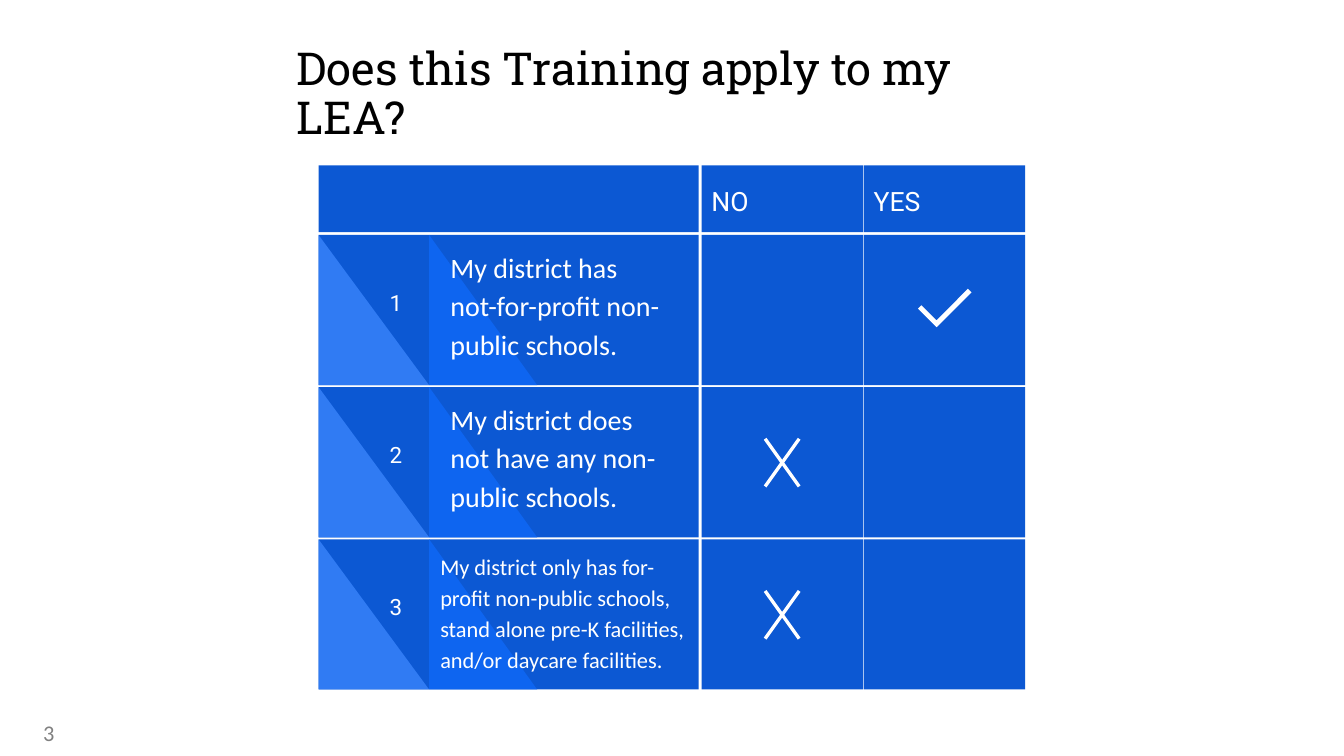
import pptx
import pptx.util
import pptx.dml.color
import pptx.enum.shapes
import pptx.enum.text

Pt = pptx.util.Pt
RGB = pptx.dml.color.RGBColor
KIND = pptx.enum.shapes.MSO_SHAPE
ANCHOR = pptx.enum.text.MSO_ANCHOR
ALIGN = pptx.enum.text.PP_ALIGN

TITLE = "Does this Training apply to my LEA?"
PAGE = "3"
HEADS = ["NO", "YES"]
# statement, answer, text left, text width, text size, space after
ROWS = [
    ("My district has not-for-profit non-public schools.",
     "YES", 314.6, 170, 20, 12),
    ("My district does not have any non-public schools.",
     "NO", 314.6, 170, 20, 12),
    ("My district only has for-profit non-public schools, "
     "stand alone pre-K facilities, and/or daycare facilities.",
     "NO", 307.4, 192, 16, 0),
]

BLUE = RGB(0x0C, 0x58, 0xD3)
MID = RGB(0x0E, 0x65, 0xF0)
LIGHT = RGB(0x30, 0x7B, 0xF3)
WHITE = RGB(0xFF, 0xFF, 0xFF)
BLACK = RGB(0, 0, 0)
GREY = RGB(0x80, 0x80, 0x80)

LEFT, WIDE = 227.5, 271.6
COLS, CELL = [501.1, 617], 115.3
HEAD_TOP, HEAD_HIGH = 118.1, 47.8
TOP, STEP, HIGH = 167.8, 108.7, 107.3

deck = pptx.Presentation()
deck.slide_width, deck.slide_height = Pt(960), Pt(540)
slide = deck.slides.add_slide(deck.slide_layouts[6])


def draw(kind, x, y, w, h, fill):
    shape = slide.shapes.add_shape(kind, Pt(x), Pt(y), Pt(w), Pt(h))
    shape.shadow.inherit = False
    shape.fill.solid()
    shape.fill.fore_color.rgb = fill
    shape.line.fill.background()
    return shape


def write(shape, text, face, size, color=WHITE, anchor=ANCHOR.TOP,
          align=ALIGN.LEFT, pad=7.2, lines=1.0, after=0):
    frame = shape.text_frame
    frame.word_wrap = True
    frame.vertical_anchor = anchor
    frame.margin_left = frame.margin_right = Pt(pad)
    frame.margin_top = frame.margin_bottom = Pt(pad)
    para = frame.paragraphs[0]
    para.text = text
    para.alignment = align
    para.line_spacing = lines
    para.space_after = Pt(after)
    para.font.name = face
    para.font.size = Pt(size)
    para.font.color.rgb = color


def label(x, y, w, h, *args, **style):
    """Add a text box and write in it."""
    box = slide.shapes.add_textbox(Pt(x), Pt(y), Pt(w), Pt(h))
    write(box, *args, **style)


def mark(answer, x, y):
    """Put a tick or a cross in the cell whose corner is x, y."""
    if answer == "YES":
        tick = draw(KIND.CORNER, x + 40.2, y + 37.5, 35.3, 18.7, WHITE)
        tick.rotation = 315
        tick.adjustments[0] = 0.188
        tick.adjustments[1] = 0.181
    else:
        cross = draw(KIND.MATH_MULTIPLY, x + 34.2, y + 21.2, 46.8, 65.5, WHITE)
        cross.adjustments[0] = 0.051


label(211.7, 33.1, 481.7, 46.8, TITLE, "Roboto Slab", 32.4, BLACK,
      pad=0, lines=0.9)
label(23.8, 506.2, 216, 28.8, PAGE, "Calibri", 16, GREY)

draw(KIND.RECTANGLE, LEFT, HEAD_TOP, WIDE, HEAD_HIGH, BLUE)
for x, head in zip(COLS, HEADS):
    cell = draw(KIND.RECTANGLE, x, HEAD_TOP, CELL, HEAD_HIGH, BLUE)
    write(cell, head, "Roboto", 19, anchor=ANCHOR.MIDDLE, lines=1.15)

for i, (text, answer, x, w, size, after) in enumerate(ROWS):
    y = TOP + i * STEP
    draw(KIND.RECTANGLE, LEFT, y, WIDE, HIGH, BLUE)
    draw(KIND.RIGHT_TRIANGLE, 306.5, y, 77.2, HIGH, MID)
    draw(KIND.RIGHT_TRIANGLE, LEFT, y, 79, HIGH, LIGHT)
    for col in COLS:
        draw(KIND.RECTANGLE, col, y, CELL, HIGH, BLUE)
    label(258.2, y, 49, 64.8, str(i + 1), "Roboto", 16,
          anchor=ANCHOR.BOTTOM, align=ALIGN.CENTER)
    mark(answer, COLS[HEADS.index(answer)], y)
    label(x, y, w, HIGH, text, "Calibri", size, lines=1.15, after=after)

deck.save("out.pptx")
